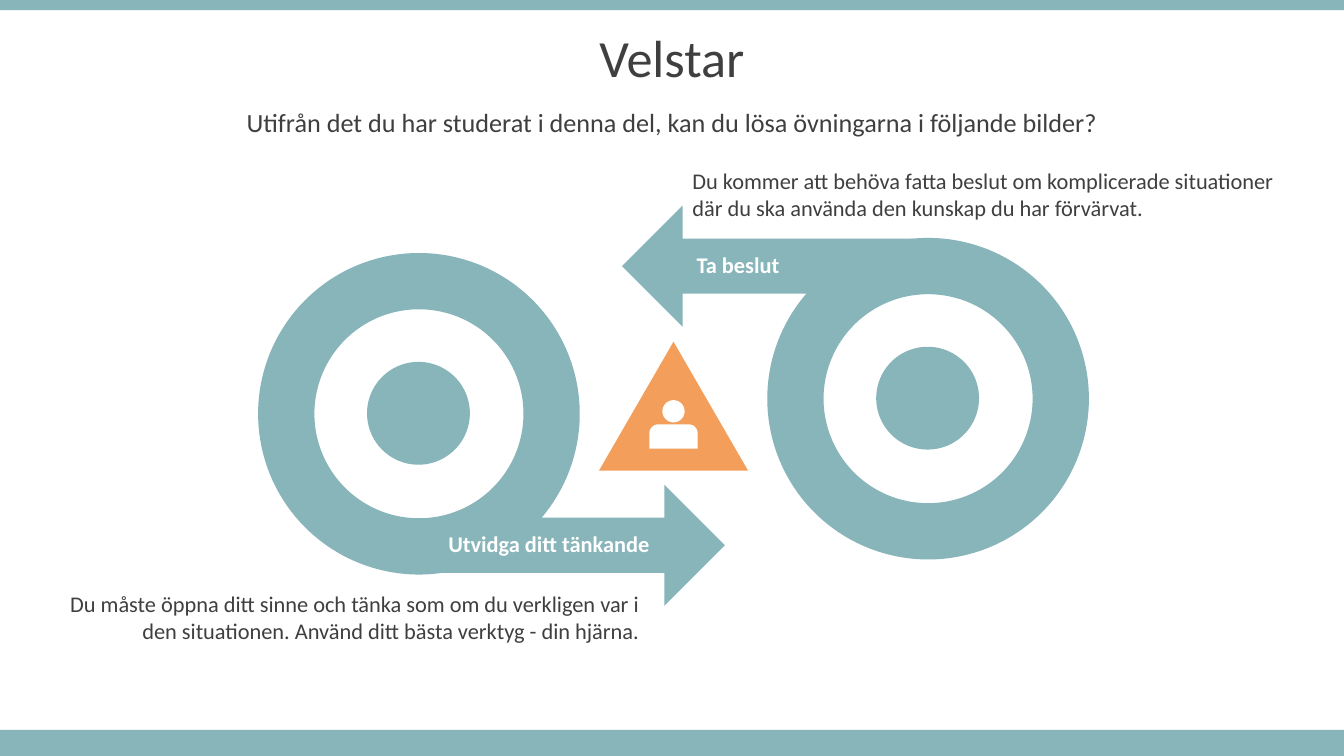
"""Build the Velstar slide: two target rings with arrows around a person sign."""
from math import cos, radians, sin

from pptx import Presentation
from pptx.dml.color import RGBColor
from pptx.enum.shapes import MSO_SHAPE as SHAPE
from pptx.enum.text import MSO_ANCHOR as ANCHOR, PP_ALIGN as ALIGN
from pptx.util import Pt

PX = 9144
TEAL = RGBColor(0x87, 0xB5, 0xBA)
ORANGE = RGBColor(0xF3, 0x9E, 0x5A)
GREY = RGBColor(0x3F, 0x3F, 0x3F)
WHITE = RGBColor(0xFF, 0xFF, 0xFF)


def add_filled(shapes, kind, box, color, adjust=(), rotation=0):
    sp = shapes.add_shape(kind, *(v * PX for v in box))
    sp.shadow.inherit = False
    sp.fill.solid()
    sp.fill.fore_color.rgb = color
    sp.line.fill.background()
    sp.rotation = rotation
    for i, value in enumerate(adjust):
        sp.adjustments[i] = value


def arc(cx, cy, radius, start, end):
    angles = [radians(a) for a in range(start, end + 1, 5)]
    return [((cx + radius * cos(a)) * PX, (cy + radius * sin(a)) * PX) for a in angles]


prs = Presentation()
prs.slide_width, prs.slide_height = 1333 * PX, 750 * PX
s = prs.slides.add_slide(prs.slide_layouts[6])

for top, height in ((724, 26), (0, 10)):
    add_filled(s.shapes, SHAPE.RECTANGLE, (0, top, 1333, height), TEAL)

RING, HUB = 319, 102
inset = (RING - HUB) // 2
for left, top, arrow_left, arrow_top, rotation in (
    (256, 251, 430, 481, 0),
    (761, 236, 617, 204, 180),
):
    target = s.shapes.add_group_shape().shapes
    add_filled(target, SHAPE.DONUT, (left, top, RING, RING), TEAL, (0.175,), rotation)
    add_filled(target, SHAPE.RIGHT_ARROW, (arrow_left, arrow_top, 289, 120), TEAL, (0.455, 0.5), rotation)
    add_filled(target, SHAPE.OVAL, (left + inset, top + inset, HUB, HUB), TEAL)

add_filled(s.shapes, SHAPE.ISOSCELES_TRIANGLE, (594, 339, 148, 128), ORANGE)

shoulders = arc(653, 430, 9, 180, 270) + arc(683, 430, 9, 270, 360)
body = [(644 * PX, 445 * PX), *shoulders, (692 * PX, 445 * PX)]
head = arc(668, 408, 11, 0, 360)
builder = s.shapes.build_freeform(*body[0])
builder.add_line_segments(body[1:], close=True)
builder.move_to(*head[0])
builder.add_line_segments(head[1:], close=True)
person = builder.convert_to_shape()
person.shadow.inherit = False
person.fill.solid()
person.fill.fore_color.rgb = WHITE
person.line.fill.background()

heading = {"alignment": ALIGN.CENTER, "line_spacing": 0.9}
left_aligned = {"alignment": ALIGN.LEFT}
right_aligned = {"alignment": ALIGN.RIGHT}
texts = (
    ("Velstar", (0, 18, 1333, 84), ANCHOR.MIDDLE, heading, 37.3, GREY, False),
    ("Utifrån det du har studerat i denna del, kan du lösa övningarna i följande bilder?",
     (0, 102, 1333, 42), ANCHOR.MIDDLE, heading, 18.7, GREY, False),
    ("Du kommer att behöva fatta beslut om komplicerade situationer "
     "där du ska använda den kunskap du har förvärvat.",
     (677, 161, 630, 64), ANCHOR.TOP, left_aligned, 16, GREY, False),
    ("Du måste öppna ditt sinne och tänka som om du verkligen var i "
     "den situationen. Använd ditt bästa verktyg - din hjärna.",
     (56, 581, 588, 64), ANCHOR.TOP, right_aligned, 16, GREY, False),
    ("Utvidga ditt tänkande", (313, 521, 341, 37), ANCHOR.TOP, right_aligned, 16, WHITE, True),
    ("Ta beslut", (681, 244, 341, 37), ANCHOR.TOP, left_aligned, 16, WHITE, True),
)
for text, box, anchor, paragraph_format, size, color, bold in texts:
    tf = s.shapes.add_textbox(*(v * PX for v in box)).text_frame
    tf.word_wrap = True
    tf.vertical_anchor = anchor
    p = tf.paragraphs[0]
    for name, value in paragraph_format.items():
        setattr(p, name, value)
    r = p.add_run()
    r.text = text
    for name, value in {"name": "Calibri", "size": Pt(size), "bold": bold}.items():
        setattr(r.font, name, value)
    r.font.color.rgb = color

prs.save("out.pptx")
